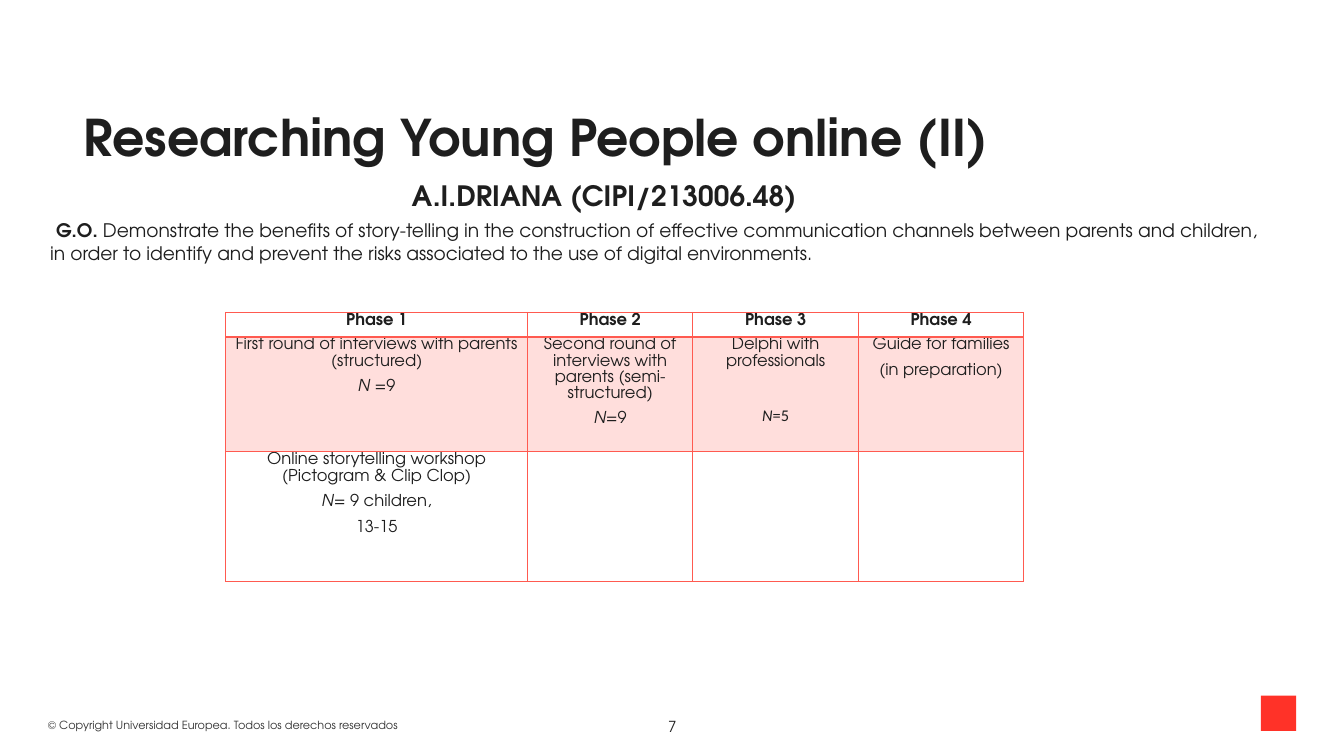
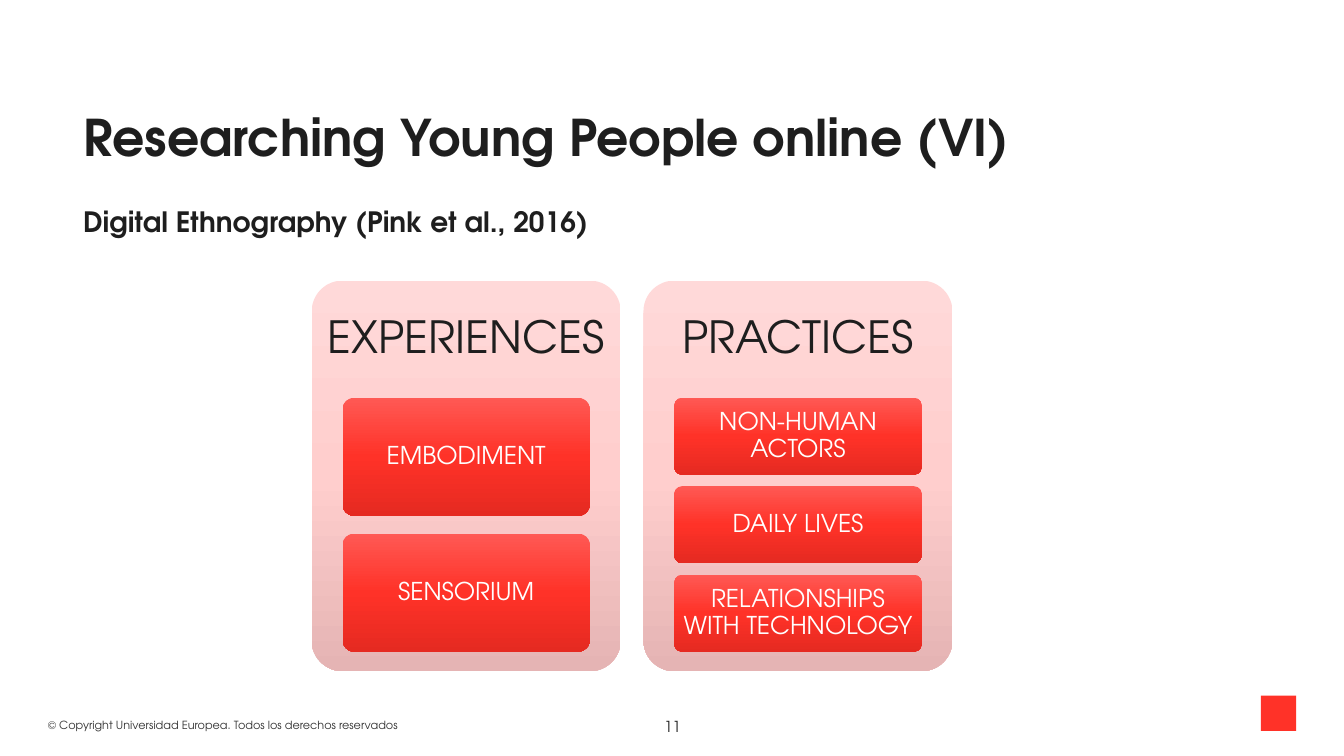
import copy
import pptx
import pptx.util
import pptx.dml.color
import pptx.enum.shapes
import pptx.enum.text
import pptx.oxml

FACE, INK, RED, ROSE = "TeX Gyre Adventor", "1E1E1E", "FF3228", "FF5A50"
PALE = ["FFD9D9", "FFCECD", "E5B4B4"]
DEEP = ["FF5954", RED, "E52A21"]
FOOT = "© Copyright Universidad Europea. Todos los derechos reservados"
HEAD = "Researching Young People online ({})"
GOAL = (
    "*G.O.* Demonstrate the benefits of story-telling in the construction of "
    "effective communication channels between parents and children, in order to "
    "identify and prevent the risks associated to the use of digital environments."
)
ROWS = [
    ["Phase 1", "Phase 2", "Phase 3", "Phase 4"],
    [
        "First round of interviews with parents (structured)\n*N* =9",
        "Second round of interviews with parents (semi-structured)\n*N*=9",
        "Delphi with professionals\n*N*=5",
        "Guide for families\n(in preparation)",
    ],
    ["Online storytelling workshop (Pictogram & Clip Clop)\n*N*= 9 children,\n13-15", "", "", ""],
]
WIDE, HIGH = [3.59, 1.97, 1.97, 1.97], [0.29, 1.37, 1.54]
PANELS = [
    ("EXPERIENCES", ["EMBODIMENT", "SENSORIUM"]),
    ("PRACTICES", ["NON-HUMAN ACTORS", "DAILY LIVES", "RELATIONSHIPS WITH TECHNOLOGY"]),
]
TITLE = dict(size=43.3, bold=True, lead=0.9, pad=(0, 0.05, 0.1, 0.05))
SUB = dict(size=24, bold=True, pad=(0, 0.05, 0.1, 0.05))
MID = dict(align="CENTER", lead=0.9, anchor="MIDDLE")

inch = pptx.util.Inches


def tint(code):
    return pptx.dml.color.RGBColor.from_string(code)


def node(tag, attrs="", body=""):
    space = pptx.oxml.ns.nsdecls("a")
    return pptx.oxml.parse_xml(f"<a:{tag} {space} {attrs}>{body}</a:{tag}>")


def write(frame, text, size=14, color=INK, bold=False, accent="italic", align="LEFT",
          lead=None, after=None, anchor="TOP", pad=None, wrap=True, indent=0, faces=None, gaps=None):
    frame.word_wrap = wrap
    frame.vertical_anchor = getattr(pptx.enum.text.MSO_ANCHOR, anchor)
    if pad:
        sides = ("left", "top", "right", "bottom")
        for side, room in zip(sides, pad):
            setattr(frame, "margin_" + side, inch(room))
    for num, line in enumerate(text.split("\n")):
        para = frame.add_paragraph() if num else frame.paragraphs[0]
        para.alignment = getattr(pptx.enum.text.PP_ALIGN, align)
        if indent:
            para._p.get_or_add_pPr().set("indent", str(inch(indent)))
        if lead:
            para.line_spacing = lead
        if after:
            para.space_after = pptx.util.Pt(after)
        if gaps and num:
            para.space_before = pptx.util.Pt(gaps)
        for part, words in enumerate(line.split("*")):
            if not words:
                continue
            run = para.add_run()
            run.text = words
            font = run.font
            font.name = faces if faces and num else FACE
            font.size, font.bold = pptx.util.Pt(size), bold
            font.color.rgb = tint(color)
            if part % 2:
                setattr(font, accent, True)


def label(slide, box, text, **form):
    write(slide.shapes.add_textbox(*map(inch, box)).text_frame, text, **form)


def block(slide, box, fill, kind="ROUNDED_RECTANGLE"):
    shape = slide.shapes.add_shape(getattr(pptx.enum.shapes.MSO_SHAPE, kind), *map(inch, box))
    shape.shadow.inherit = False
    shape.line.fill.background()
    if isinstance(fill, str):
        shape.fill.solid()
        shape.fill.fore_color.rgb = tint(fill)
        return shape
    shape.adjustments[0] = 0.1
    shape.fill.gradient()
    shape.fill.gradient_angle = 270
    stops = shape._element.spPr.find(".//" + pptx.oxml.ns.qn("a:gsLst"))
    stops.append(copy.deepcopy(stops[0]))
    for num, stop in enumerate(shape.fill.gradient_stops):
        stop.position = num / 2
        stop.color.rgb = tint(fill[num])
    return shape


def start(deck, part, page):
    slide = deck.slides.add_slide(deck.slide_layouts[6])
    label(slide, (0.47, 8.5, 4.42, 0.26), FOOT, size=9.6, color="333333", wrap=False)
    block(slide, (15.01, 8.28, 0.42, 0.42), RED, "RECTANGLE")
    label(slide, (7.66, 8.49, 0.69, 0.43), page, size=13, align="CENTER")
    label(slide, (0.99, 1.29, 12.14, 0.77), HEAD.format(part), **TITLE)
    return slide


def edge(cell, low):
    props = cell._tc.get_or_add_tcPr()
    for num, side in enumerate("LRTB"):
        width = pptx.util.Pt(2 if side == low else 1)
        paint = f'<a:solidFill><a:srgbClr val="{ROSE}"/></a:solidFill>'
        props.insert(num, node("ln" + side, f'w="{width}"', paint))


def phases(slide):
    box = map(inch, (2.69, 3.72, sum(WIDE), sum(HIGH)))
    grid = slide.shapes.add_table(len(HIGH), len(WIDE), *box).table
    for col, width in zip(grid.columns, WIDE):
        col.width = inch(width)
    for r, (texts, height) in enumerate(zip(ROWS, HIGH)):
        grid.rows[r].height = inch(height)
        for c, text in enumerate(texts):
            cell = grid.cell(r, c)
            cell.margin_left = cell.margin_right = inch(0.07)
            cell.margin_top = cell.margin_bottom = 0
            late = dict(faces="Calibri", gaps=22) if (r, c) == (1, 2) else {}
            write(cell.text_frame, text, bold=r == 0, align="CENTER", lead=1.07, after=8, **late)
            if r == 1:
                cell.fill.solid()
                cell.fill.fore_color.rgb = tint(ROSE)
                shade = cell._tc.tcPr.find(".//" + pptx.oxml.ns.qn("a:srgbClr"))
                shade.append(node("alpha", 'val="20000"'))
            else:
                cell.fill.background()
            edge(cell, {0: "B", 1: "T"}.get(r))


def panels(slide):
    left, top, width, height = 3.71, 3.34, 3.68, 4.65
    for num, (head, items) in enumerate(PANELS):
        x = left + num * 3.95
        block(slide, (x, top, width, height), PALE)
        label(slide, (x, top, width, 0.3 * height), head, size=38, pad=[0.16] * 4, **MID)
        count = len(items)
        tall = 0.65 * height / (count + 0.15 * (count - 1))
        for row, item in enumerate(items):
            y = top + 0.3 * height + row * 1.15 * tall
            card = block(slide, (x + 0.1 * width, y, 0.8 * width, tall), DEEP)
            write(card.text_frame, item, size=21, color="FFFFFF", pad=(0.06, 0.04, 0.06, 0.04), **MID)


def main():
    deck = pptx.Presentation()
    deck.slide_width, deck.slide_height = inch(16), inch(9)
    slide = start(deck, "II", "7")
    label(slide, (4.9, 2.07, 6.2, 0.65), "A.I.DRIANA (CIPI/213006.48)", **SUB)
    label(slide, (0.5, 2.56, 14.74, 0.67), GOAL, size=16, accent="bold", indent=0.07)
    phases(slide)
    slide = start(deck, "VI", "11")
    label(slide, (0.99, 2.38, 6.2, 0.65), "Digital Ethnography (Pink et al., 2016)", **SUB)
    panels(slide)
    deck.save("out.pptx")


if __name__ == "__main__":
    main()
